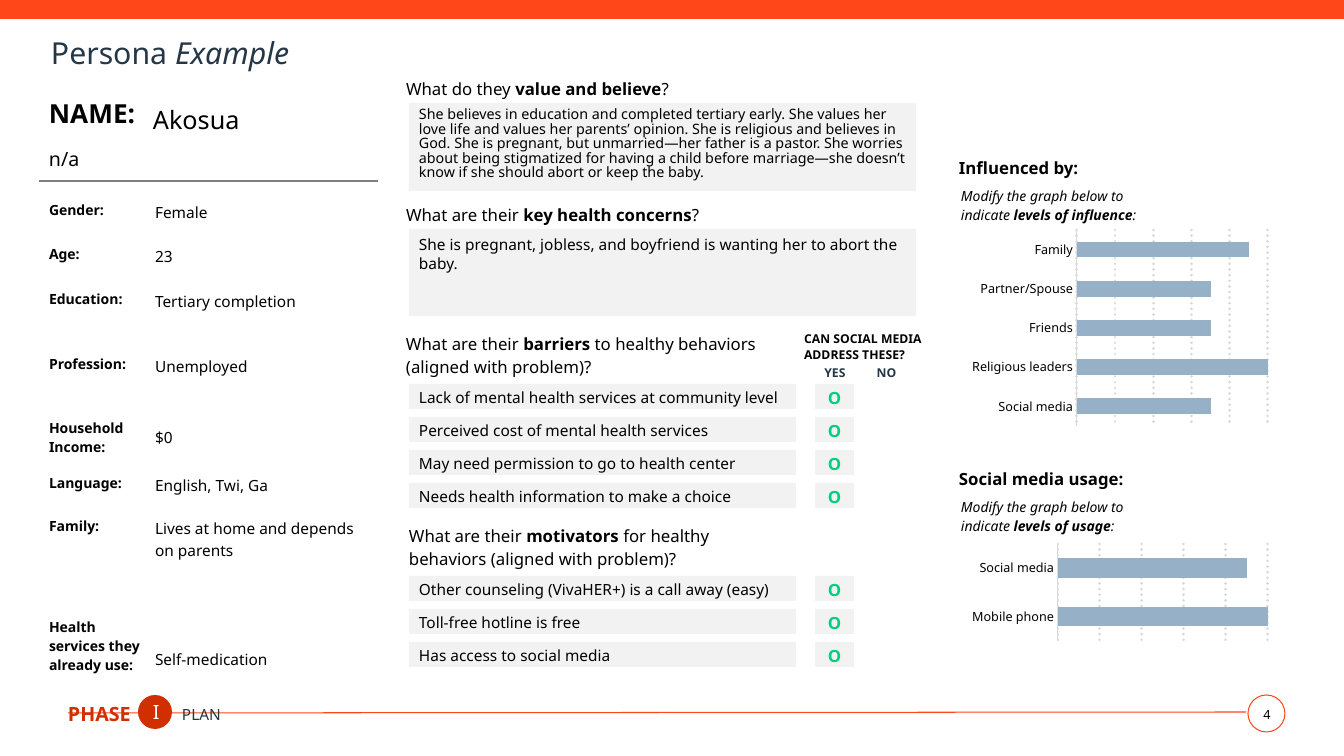
from dataclasses import dataclass

from pptx import Presentation
from pptx import util as u
from pptx.chart import data as chart_data
from pptx.dml import color
from pptx.enum import chart as charts, dml, shapes, text
from pptx.oxml import xmlchemy


@dataclass(frozen=True)
class Theme:
    font: str = "Noto Sans"
    chart_font: str = "Arial"
    black: str = "000000"
    white: str = "FFFFFF"
    navy: str = "253746"
    orange: str = "FF4719"
    red: str = "D03000"
    green: str = "00CE7C"
    panel: str = "F2F2F2"
    rule: str = "7F7F7F"
    grid: str = "D9D9D9"
    bar: str = "96B1C7"
    title: float = 21.6
    name: float = 18.7
    persona: float = 18
    large: float = 14
    heading: float = 12
    body: float = 11
    belief: float = 10.2
    label: float = 10
    axis: float = 9
    caption: float = 8.7


THEME = Theme()
LEFT, CENTER = text.PP_ALIGN.LEFT, text.PP_ALIGN.CENTER
TOP, MIDDLE = text.MSO_ANCHOR.TOP, text.MSO_ANCHOR.MIDDLE
INSET, FLUSH = (10, 5, 10, 5), (0, 0, 0, 0)


def px(length):
    return u.Emu(round(length * 914400 / 100.8))


def rgb(value):
    return color.RGBColor.from_string(value)


def write(shape, paragraphs, size, ink=THEME.black, align=LEFT, anchor=TOP,
          inset=INSET, spacing=1.14, after=0):
    frame = shape.text_frame
    frame.word_wrap = True
    frame.vertical_anchor = anchor
    (frame.margin_left, frame.margin_top,
     frame.margin_right, frame.margin_bottom) = map(px, inset)
    for index, runs in enumerate(paragraphs):
        paragraph = frame.add_paragraph() if index else frame.paragraphs[0]
        paragraph.alignment = align
        paragraph.line_spacing = spacing
        paragraph.space_after = u.Pt(after)
        for words, style in runs:
            run = paragraph.add_run()
            run.text = words
            run.font.name = THEME.font
            run.font.size = u.Pt(size)
            run.font.bold = "b" in style
            run.font.italic = "i" in style
            run.font.color.rgb = rgb(ink)


def put_text(slide, box, runs, size, **options):
    write(slide.shapes.add_textbox(*map(px, box)), [runs], size, **options)


def put_shape(slide, kind, box, fill=None, line=None):
    shape = slide.shapes.add_shape(kind, *map(px, box))
    shape.shadow.inherit = False
    if fill:
        shape.fill.solid()
        shape.fill.fore_color.rgb = rgb(fill)
    else:
        shape.fill.background()
    if line:
        shape.line.color.rgb = rgb(line)
        shape.line.width = u.Pt(0.75)
    else:
        shape.line.fill.background()
    return shape


def put_line(slide, ends, ink, width):
    line = slide.shapes.add_connector(shapes.MSO_CONNECTOR.STRAIGHT, *map(px, ends))
    line.line.color.rgb = rgb(ink)
    line.line.width = u.Pt(width)
    line._element.spPr.append(xmlchemy.OxmlElement("a:effectLst"))


def put_panel(slide, box, words, size, style="", **options):
    panel = put_shape(slide, shapes.MSO_SHAPE.RECTANGLE, box, THEME.panel)
    write(panel, [[(words, style)]], size, after=12, **options)


def header(slide, box):
    x, y, w, h = box
    put_shape(slide, shapes.MSO_SHAPE.RECTANGLE, (x, y, w, 19), THEME.orange)
    put_text(slide, (x + 41, y + 33, 1033, 43), [("Persona ", ""), ("Example", "i")],
             THEME.title, ink=THEME.navy, spacing=0.9)


def footer(slide, box):
    x, y, w, h = box
    oval = shapes.MSO_SHAPE.OVAL
    put_line(slide, (x + w - 39, y + 17, x + 10, y + 18), THEME.orange, 0.75)
    put_shape(slide, oval, (x + w - 37, y, 37, 37), line=THEME.orange)
    put_text(slide, (x + w - 36, y + 7, 36, 25), [("4", "")], THEME.axis,
             align=CENTER, spacing=1)
    put_text(slide, (x, y + 2, 95, 34), [("PHASE", "b")], THEME.large,
             ink=THEME.red, spacing=1)
    phase = put_shape(slide, oval, (x + 80, y, 34, 34), THEME.red)
    write(phase, [[("I", "")]], THEME.large, ink=THEME.white, align=CENTER,
          anchor=MIDDLE, spacing=1)
    put_text(slide, (x + 114, y + 5, 80, 29), [("PLAN", "")], THEME.body,
             ink=THEME.navy, spacing=1)


def profile(slide, box, facts):
    x, y, w, h = box
    put_text(slide, (x + 10, y + 2, 100, 31), [("NAME:", "b")], THEME.name,
             inset=FLUSH, spacing=1)
    put_text(slide, (x + 104, y, w - 104, 34), [("Akosua", "")], THEME.persona, after=12)
    put_text(slide, (x, y + 44, w, 34), [("n/a", "")], THEME.large, after=12)
    put_line(slide, (x, y + 86, x + w, y + 86), THEME.rule, 1)
    for label, value, top, height, anchor in facts:
        put_text(slide, (x, y + top, 118, 32), [(label, "b")], THEME.label)
        put_text(slide, (x + 106, y + top + 2, w - 106, height), [(value, "")],
                 THEME.body, anchor=anchor, after=12)


def belief(slide, box, question, answer, size, spacing):
    x, y, w, h = box
    put_text(slide, (x, y, w - 27, 23), question, THEME.heading, inset=FLUSH)
    put_panel(slide, (x + 3, y + 27, w - 3, h - 27), answer, size, spacing=spacing)


def checklist(slide, box, question, items, indent):
    x, y, w, h = box
    put_text(slide, (x, y, 364, 46), question, THEME.heading, inset=FLUSH)
    for index, item in enumerate(items):
        top = y + h - 25 - 33 * (len(items) - 1 - index)
        put_panel(slide, (x + indent, top, 387, 25), item, THEME.body,
                  anchor=MIDDLE, inset=(10, 5, 0, 5), spacing=1.05)
        put_panel(slide, (x + indent + 406, top, 39, 25), "O", THEME.heading, "b",
                  ink=THEME.green, align=CENTER, anchor=MIDDLE, inset=(10, 0, 10, 0))


def answer_key(slide, box):
    x, y, w, h = box
    caption = slide.shapes.add_textbox(*map(px, (x, y, w, 31)))
    write(caption, [[("CAN SOCIAL MEDIA", "b")], [("ADDRESS THESE?", "b")]],
          THEME.caption, inset=FLUSH, spacing=1.05)
    for answer, left, width in (("YES", 10, 42), ("NO", 63, 39)):
        put_text(slide, (x + left, y + 29, width, 20), [(answer, "b")], THEME.caption,
                 ink=THEME.navy, align=CENTER, inset=FLUSH, spacing=1.4)


def levels(slide, box, heading, measure, chart_height, scores):
    x, y, w, h = box
    put_text(slide, (x, y, w, 23), [(heading, "b")], THEME.heading, inset=FLUSH)
    put_text(slide, (x + 2, y + 30, 182, 38),
             [("Modify the graph below to indicate ", "i"), (measure, "bi"), (":", "i")],
             THEME.label, inset=FLUSH)
    series = chart_data.CategoryChartData()
    series.categories = list(scores)
    series.add_series("Series 1", list(scores.values()))
    area = (x + 7, y + h - chart_height, 308, chart_height)
    chart = slide.shapes.add_chart(charts.XL_CHART_TYPE.BAR_CLUSTERED,
                                   *map(px, area), series).chart
    chart.has_title = False
    chart.has_legend = False
    chart.font.name = THEME.chart_font
    chart.font.size = u.Pt(THEME.label)
    chart.font.color.rgb = rgb(THEME.black)
    plot = chart.plots[0]
    plot.gap_width = 150
    plot.vary_by_categories = False
    bars = plot.series[0].format.fill
    bars.solid()
    bars.fore_color.rgb = rgb(THEME.bar)
    names = chart.category_axis
    names.reverse_order = True
    names.major_tick_mark = charts.XL_TICK_MARK.NONE
    names.tick_labels.font.name = THEME.font
    names.tick_labels.font.size = u.Pt(THEME.axis)
    names.format.line.color.rgb = rgb(THEME.grid)
    names.format.line.width = u.Pt(0.75)
    scale = chart.value_axis
    scale.minimum_scale, scale.maximum_scale, scale.major_unit = 0, 100, 20
    scale.major_tick_mark = charts.XL_TICK_MARK.NONE
    scale.tick_label_position = charts.XL_TICK_LABEL_POSITION.NONE
    scale.format.line.fill.background()
    grid = scale.major_gridlines.format.line
    grid.color.rgb = rgb(THEME.grid)
    grid.width = u.Pt(2)
    grid.dash_style = dml.MSO_LINE.ROUND_DOT
    grid._get_or_add_ln().set("cap", "rnd")


def main():
    deck = Presentation()
    deck.slide_width, deck.slide_height = px(1344), px(756)
    slide = deck.slides.add_slide(deck.slide_layouts[6])
    header(slide, (0, 0, 1344, 76))
    footer(slide, (58, 695, 1227, 37))
    profile(slide, (39, 95, 339, 609), (
        ("Gender:", "Female", 99, 31, TOP),
        ("Age:", "23", 143, 31, TOP),
        ("Education:", "Tertiary completion", 188, 53, TOP),
        ("Profession:", "Unemployed", 253, 53, TOP),
        ("Household Income:", "$0", 317, 45, MIDDLE),
        ("Language:", "English, Twi, Ga", 372, 31, TOP),
        ("Family:", "Lives at home and depends on parents", 415, 91, TOP),
        ("Health services they already use:", "Self-medication", 516, 91, MIDDLE)))
    belief(slide, (406, 76, 510, 115),
           [("What do they ", ""), ("value and believe", "b"), ("?", "")],
           "She believes in education and completed tertiary early. She values her love "
           "life and values her parents’ opinion. She is religious and believes in God. "
           "She is pregnant, but unmarried—her father is a pastor. She worries about being "
           "stigmatized for having a child before marriage—she doesn’t know if she should "
           "abort or keep the baby.", THEME.belief, 0.85)
    belief(slide, (406, 202, 510, 114),
           [("What are their ", ""), ("key health concerns", "b"), ("?", "")],
           "She is pregnant, jobless, and boyfriend is wanting her to abort the baby.",
           THEME.body, 1.05)
    checklist(slide, (406, 331, 448, 177),
              [("What are their ", ""), ("barriers", "b"),
               (" to healthy behaviors (aligned with problem)?", "")],
              ("Lack of mental health services at community level",
               "Perceived cost of mental health services",
               "May need permission to go to health center",
               "Needs health information to make a choice"), 3)
    answer_key(slide, (804, 331, 121, 49))
    checklist(slide, (409, 523, 445, 144),
              [("What are their ", ""), ("motivators", "b"),
               (" for healthy behaviors (aligned with problem)?", "")],
              ("Other counseling (VivaHER+) is a call away (easy)",
               "Toll-free hotline is free", "Has access to social media"), 0)
    levels(slide, (959, 155, 329, 275), "Influenced by:", "levels of influence", 204,
           {"Family": 90, "Partner/Spouse": 70, "Friends": 70,
            "Religious leaders": 100, "Social media": 70})
    levels(slide, (959, 466, 329, 177), "Social media usage:", "levels of usage", 101,
           {"Social media": 90, "Mobile phone": 100})
    deck.save("out.pptx")


if __name__ == "__main__":
    main()
